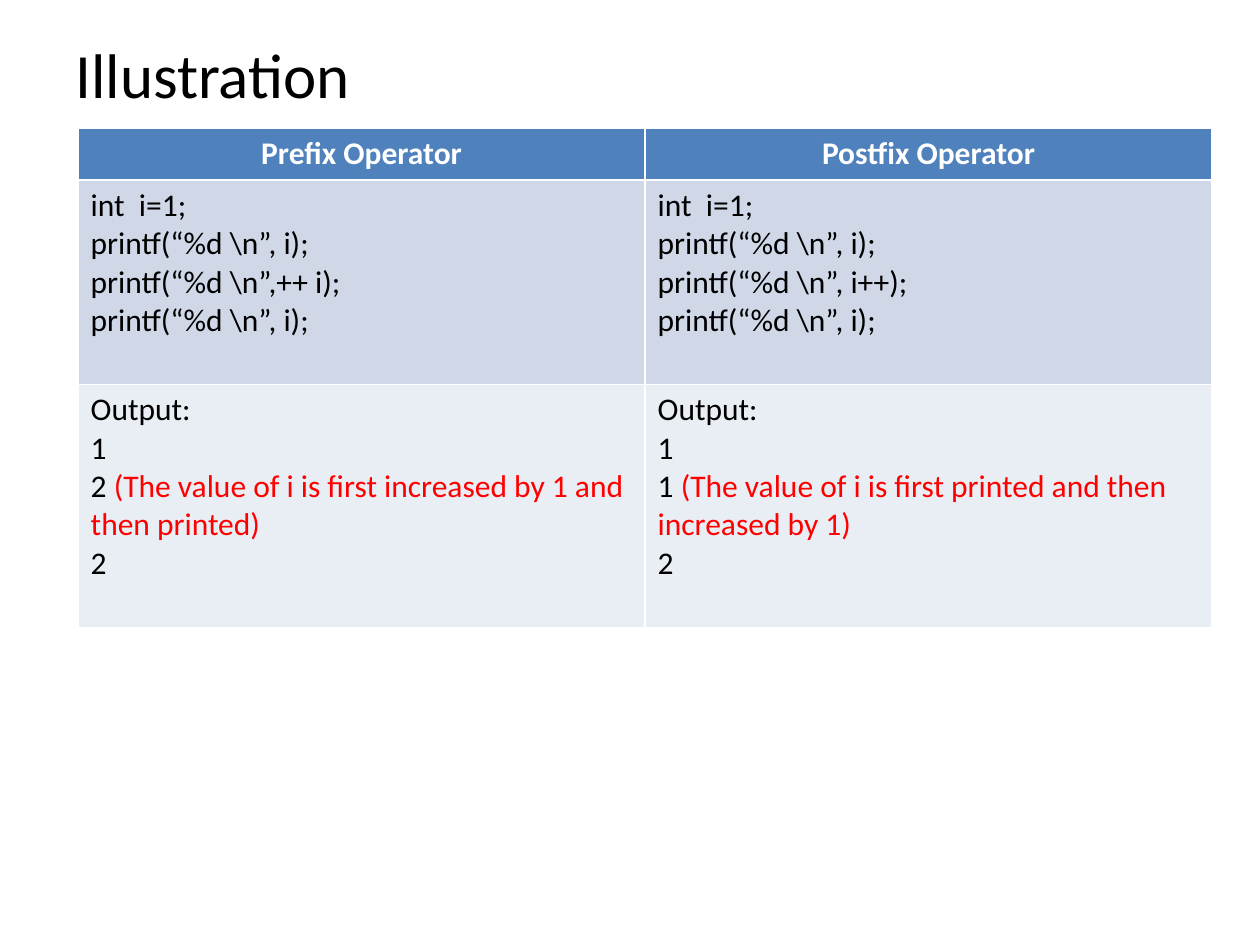
from pptx import Presentation
from pptx.dml.color import RGBColor as RGB
from pptx.enum.text import MSO_ANCHOR as ANCHOR, PP_ALIGN as ALIGN
from pptx.util import Inches, Pt

# Content: a line is a list of (text, colour name) runs
TITLE = "Illustration"
HEADERS = ["Prefix Operator", "Postfix Operator"]
PRINT = "printf(“%d \\n”, i);"
CODE = [
    ["int  i=1;", PRINT, "printf(“%d \\n”,++ i);", PRINT],
    ["int  i=1;", PRINT, "printf(“%d \\n”, i++);", PRINT],
]
OUTPUT = [
    ("2 ", "(The value of i is first increased by 1 and then printed)"),
    ("1 ", "(The value of i is first printed and then increased by 1)"),
]
ROWS = [
    [[[(h, "header_text")]] for h in HEADERS],
    [[[(line, "text")] for line in lines] for lines in CODE],
    [[[("Output:", "text")], [("1", "text")],
      [(value, "text"), (note, "note")], [("2", "text")]]
     for value, note in OUTPUT],
]

THEME = {
    "font": "Calibri", "title_size": Pt(36), "table_size": Pt(18),
    "text": RGB(0, 0, 0), "header_text": RGB(255, 255, 255),
    "note": RGB(255, 0, 0),
    "fills": [RGB(0x4F, 0x81, 0xBD), RGB(0xD0, 0xD8, 0xE8),
              RGB(0xE9, 0xED, 0xF4)],
}
ROW_HEIGHTS = [0.41, 1.62, 1.93]
COL_WIDTH = 4.5


def style_run(r, size, color, bold=False):
    r.font.name = THEME["font"]
    r.font.size = size
    r.font.bold = bold
    r.font.color.rgb = THEME[color]


def fill_cell(cell, lines, row):
    cell.fill.solid()
    cell.fill.fore_color.rgb = THEME["fills"][row]
    tf = cell.text_frame
    for i, line in enumerate(lines):
        p = tf.paragraphs[0] if i == 0 else tf.add_paragraph()
        p.alignment = ALIGN.CENTER if row == 0 else ALIGN.LEFT
        for text, color in line:
            r = p.add_run()
            r.text = text
            style_run(r, THEME["table_size"], color, bold=row == 0)


prs = Presentation()
prs.slide_width, prs.slide_height = Inches(10), Inches(7.5)
s = prs.slides.add_slide(prs.slide_layouts[5])

# Title
title = s.shapes.title
title.left, title.top = Inches(0.5), Inches(0.3)
title.width, title.height = Inches(9), Inches(0.56)
tf = title.text_frame
tf.text = TITLE
tf.vertical_anchor = ANCHOR.MIDDLE
tf.paragraphs[0].alignment = ALIGN.JUSTIFY
style_run(tf.paragraphs[0].runs[0], THEME["title_size"], "text")

# Comparison table
table = s.shapes.add_table(
    len(ROWS), len(HEADERS), Inches(0.62), Inches(1.02),
    Inches(COL_WIDTH * len(HEADERS)), Inches(sum(ROW_HEIGHTS))).table
for col in table.columns:
    col.width = Inches(COL_WIDTH)
for i, (height, row) in enumerate(zip(ROW_HEIGHTS, ROWS)):
    table.rows[i].height = Inches(height)
    for j, lines in enumerate(row):
        fill_cell(table.cell(i, j), lines, i)

prs.save("out.pptx")
